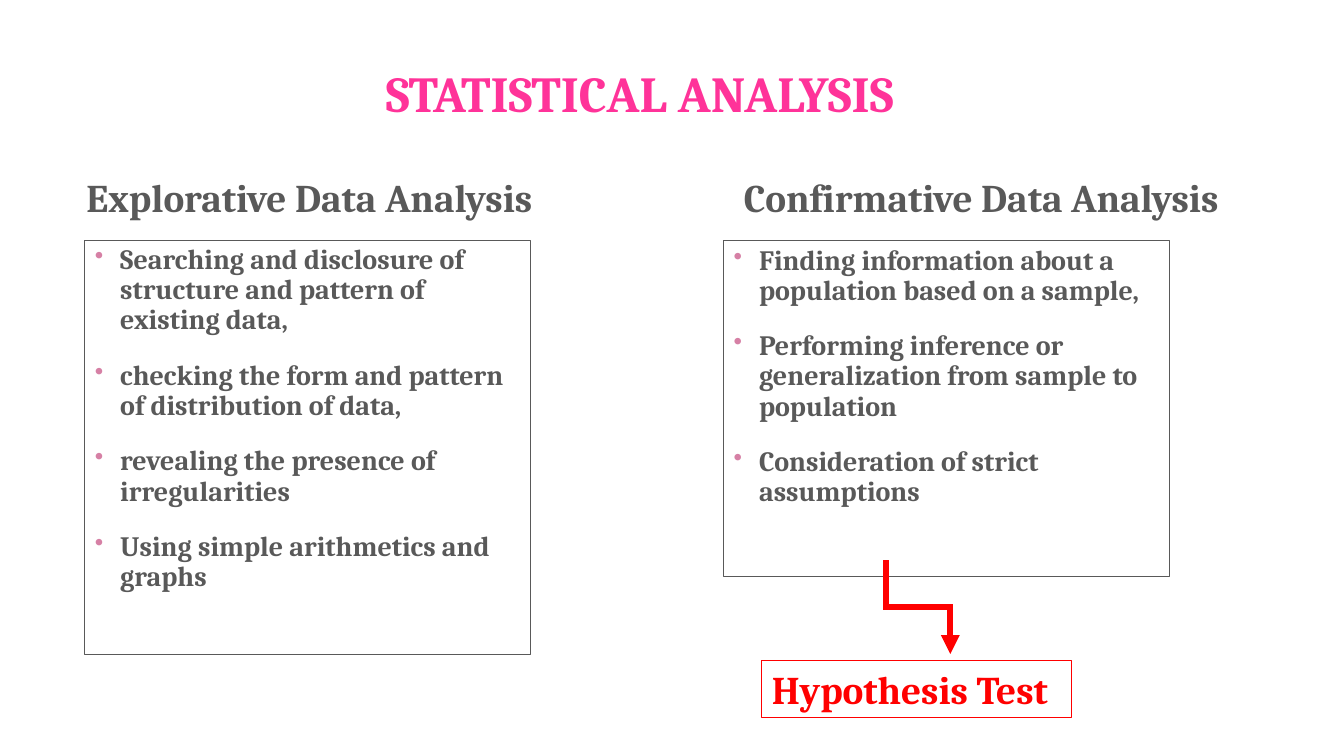
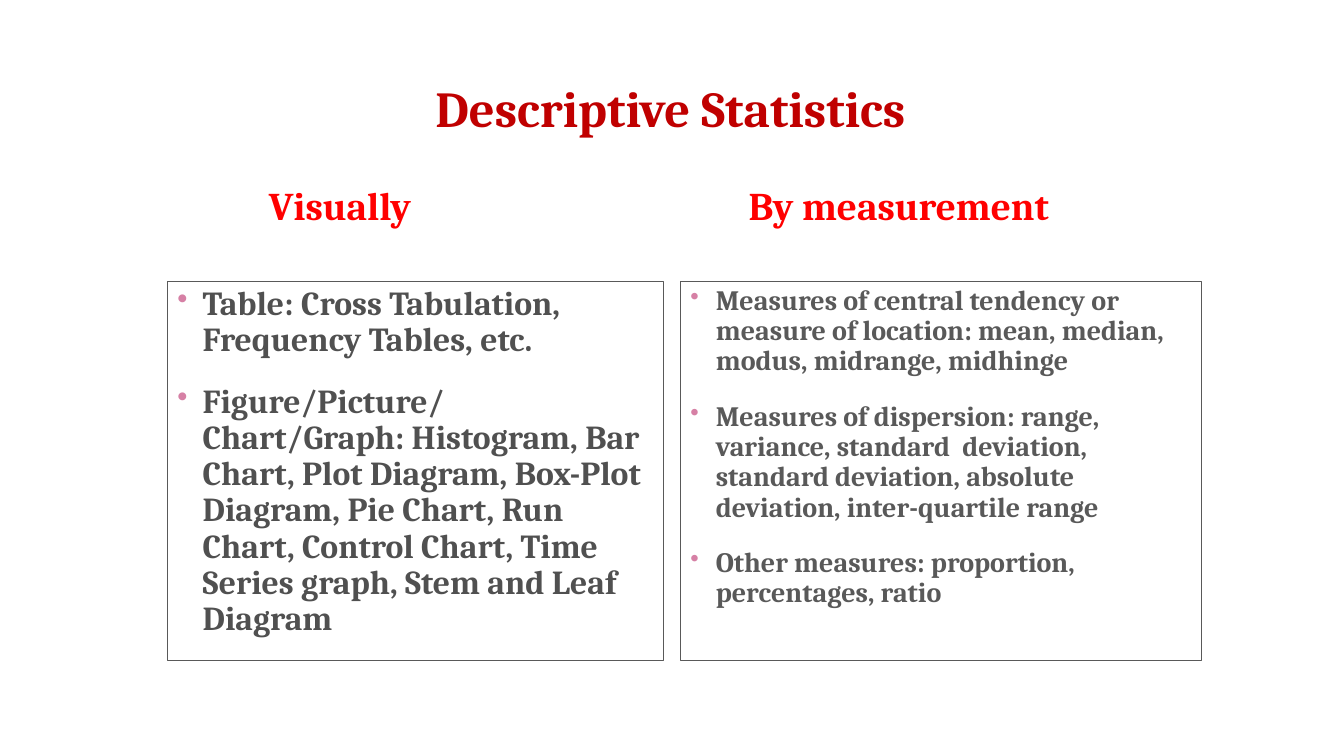
import dataclasses

import lxml.etree
import pptx
import pptx.dml.color
import pptx.enum.shapes
import pptx.enum.text
import pptx.oxml.ns
import pptx.util

Cm = pptx.util.Cm
Pt = pptx.util.Pt
Align = pptx.enum.text.PP_ALIGN
qn = pptx.oxml.ns.qn


@dataclasses.dataclass(frozen=True)
class Theme:
    font: str = "Cambria"
    pink: str = "FF3399"
    crimson: str = "C00000"
    red: str = "FF0000"
    gray: str = "595959"
    dark_gray: str = "505050"
    bullet: str = "D680A5"
    title_size: int = 36
    heading_size: int = 28
    large_size: int = 24
    body_size: int = 20
    border: float = 0.75
    arrow: float = 4.5
    line_spacing: float = 0.9
    item_gap: int = 18


@dataclasses.dataclass(frozen=True)
class Box:
    left: float
    top: float
    width: float
    height: float

    def lengths(self):
        return [Cm(value) for value in dataclasses.astuple(self)]

    def inner(self, left, top, width, height):
        return Box(self.left + left, self.top + top, width, height)


THEME = Theme()
PAGE = Box(0, 0, 33.87, 19.05)
TITLE_WIDTH = 26.67
HEADING_HEIGHT = 1.45


def rgb(value):
    return pptx.dml.color.RGBColor.from_string(value)


def style_text(para, size, color):
    for span in para.runs:
        span.font.name = THEME.font
        span.font.size = Pt(size)
        span.font.bold = True
        span.font.color.rgb = rgb(color)


def set_border(shape, color):
    shape.line.color.rgb = rgb(color)
    shape.line.width = Pt(THEME.border)


def add_title_page(deck, text, color, box):
    page = deck.slides.add_slide(deck.slide_layouts[5])
    title = page.shapes.title
    title.left, title.top, title.width, title.height = box.lengths()
    frame = title.text_frame
    frame.text = text
    frame.word_wrap = True
    frame.auto_size = pptx.enum.text.MSO_AUTO_SIZE.NONE
    frame.vertical_anchor = pptx.enum.text.MSO_ANCHOR.BOTTOM
    para = frame.paragraphs[0]
    para.alignment = Align.CENTER
    para.line_spacing = THEME.line_spacing
    style_text(para, THEME.title_size, color)
    return page


def add_heading(page, box, text, color, alignment=Align.LEFT):
    heading = page.shapes.add_textbox(*box.lengths())
    frame = heading.text_frame
    frame.word_wrap = True
    frame.text = text
    frame.paragraphs[0].alignment = alignment
    style_text(frame.paragraphs[0], THEME.heading_size, color)
    return heading


def add_bullet(para):
    properties = para._p.get_or_add_pPr()
    properties.set("marL", str(Cm(0.64)))
    properties.set("indent", str(-Cm(0.64)))
    color = lxml.etree.SubElement(properties, qn("a:buClr"))
    lxml.etree.SubElement(color, qn("a:srgbClr"), val=THEME.bullet)
    lxml.etree.SubElement(properties, qn("a:buSzPct"), val="90000")
    lxml.etree.SubElement(properties, qn("a:buChar"), char="•")


def add_bullet_panel(page, box, items, size=THEME.body_size, color=THEME.gray):
    panel = page.shapes.add_textbox(*box.lengths())
    set_border(panel, THEME.gray)
    frame = panel.text_frame
    frame.word_wrap = True
    for index, item in enumerate(items):
        para = frame.add_paragraph() if index else frame.paragraphs[0]
        para.text = item
        add_bullet(para)
        para.line_spacing = THEME.line_spacing
        para.space_before = Pt(THEME.item_gap if index else 0)
        style_text(para, size, color)


def add_down_arrow(page, box):
    center_x = box.left + box.width / 2
    center_y = box.top + box.height / 2
    half_run, half_rise = box.height / 2, box.width / 2
    arrow = page.shapes.add_connector(
        pptx.enum.shapes.MSO_CONNECTOR.ELBOW,
        Cm(center_x + half_run), Cm(center_y - half_rise),
        Cm(center_x - half_run), Cm(center_y + half_rise),
    )
    arrow.line.color.rgb = rgb(THEME.red)
    arrow.line.width = Pt(THEME.arrow)
    properties = arrow._element.spPr
    properties.find(qn("a:xfrm")).set("rot", str(270 * 60000))
    line = properties.find(qn("a:ln"))
    lxml.etree.SubElement(line, qn("a:miter"), lim="800000")
    lxml.etree.SubElement(line, qn("a:tailEnd"), type="triangle")
    lxml.etree.SubElement(properties, qn("a:effectLst"))


def add_hypothesis_callout(page, box):
    add_down_arrow(page, box.inner(3.13, 0, 1.62, 2.36))
    label_box = box.inner(0, box.height - HEADING_HEIGHT, box.width, HEADING_HEIGHT)
    label = add_heading(page, label_box, "Hypothesis Test", THEME.red)
    set_border(label, THEME.red)


def build_analysis_page(deck, box):
    page = add_title_page(deck, "STATISTICAL ANALYSIS", THEME.pink,
                          box.inner(2.79, 1.45, TITLE_WIDTH, 1.78))
    add_heading(page, box.inner(1.93, 4.24, 12.12, HEADING_HEIGHT),
                "Explorative Data Analysis", THEME.gray)
    add_heading(page, box.inner(18.5, 4.24, 12.83, HEADING_HEIGHT),
                "Confirmative Data Analysis", THEME.gray)
    add_bullet_panel(page, box.inner(2.14, 6.05, 11.23, 10.44), [
        "Searching and disclosure of structure and pattern of existing data,",
        "checking the form and pattern of distribution of data,",
        "revealing the presence of irregularities",
        "Using simple arithmetics and graphs",
    ])
    add_bullet_panel(page, box.inner(18.24, 6.07, 11.23, 8.46), [
        "Finding information about a population based on a sample,",
        "Performing inference or generalization from sample to population",
        "Consideration of strict assumptions",
    ])
    add_hypothesis_callout(page, box.inner(19.2, 14.12, 7.8, 3.97))


def build_descriptive_page(deck, box):
    page = add_title_page(deck, "Descriptive Statistics", THEME.crimson,
                          box.inner(3.56, 1.88, TITLE_WIDTH, 1.73))
    add_heading(page, box.inner(6.53, 4.45, 9.04, HEADING_HEIGHT),
                "Visually", THEME.red)
    add_heading(page, box.inner(17.15, 4.45, 11, HEADING_HEIGHT),
                "By measurement", THEME.red, Align.CENTER)
    add_bullet_panel(page, box.inner(4.22, 7.09, 12.5, 9.55), [
        "Table: Cross Tabulation, Frequency Tables, etc.",
        "Figure/Picture/ Chart/Graph: Histogram, Bar Chart, Plot Diagram, "
        "Box-Plot Diagram, Pie Chart, Run Chart, Control Chart, "
        "Time Series graph, Stem and Leaf Diagram",
    ], THEME.large_size, THEME.dark_gray)
    add_bullet_panel(page, box.inner(17.15, 7.09, 13.13, 9.55), [
        "Measures of central tendency or measure of location: "
        "mean, median, modus, midrange, midhinge",
        "Measures of dispersion: range, variance, standard  deviation, "
        "standard deviation, absolute deviation, inter-quartile range",
        "Other measures: proportion, percentages, ratio",
    ])


def main():
    deck = pptx.Presentation()
    deck.slide_width = Cm(PAGE.width)
    deck.slide_height = Cm(PAGE.height)
    build_analysis_page(deck, PAGE)
    build_descriptive_page(deck, PAGE)
    deck.save("out.pptx")


if __name__ == "__main__":
    main()
